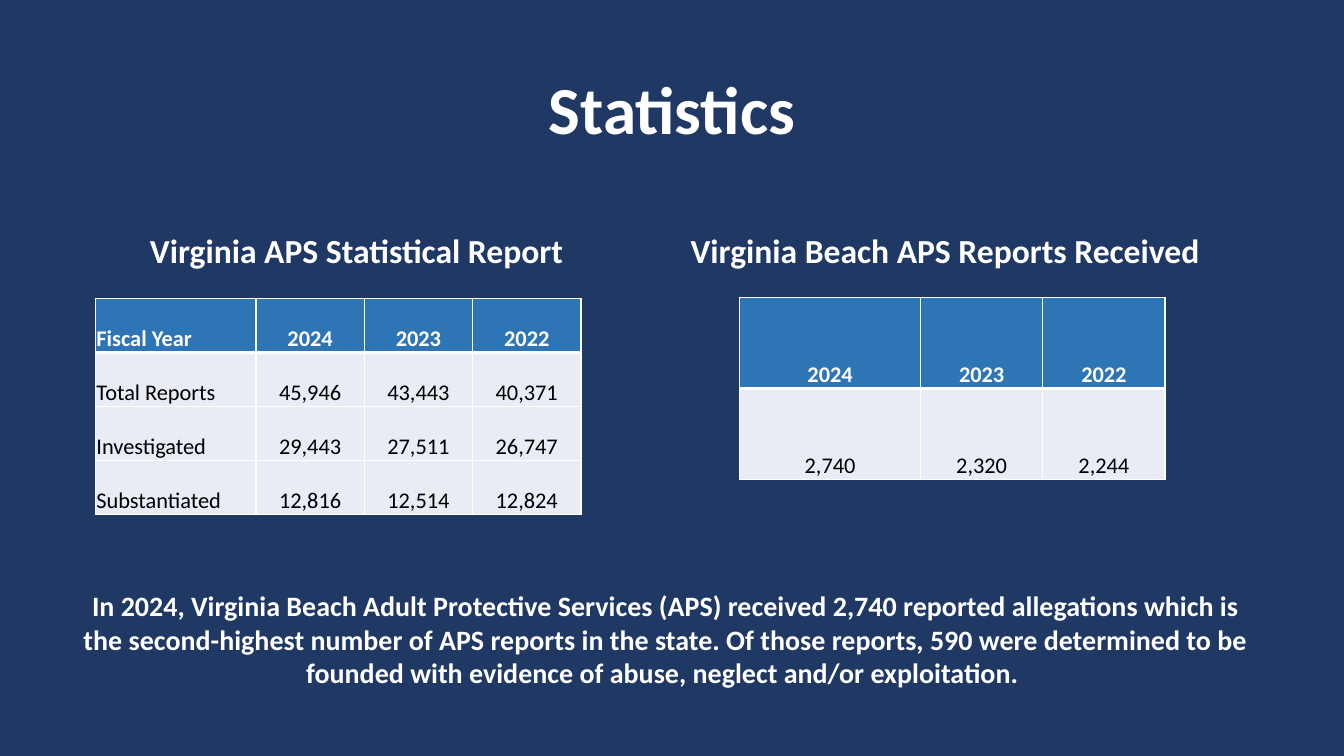
from lxml import etree
from pptx import Presentation
from pptx.dml.color import RGBColor
from pptx.enum import text as t
from pptx.oxml import ns
from pptx.util import Cm, Pt

NAVY, BLUE, PALE, WHITE, BLACK = "203864", "2E75B6", "E9EBF5", "FFFFFF", "000000"
LEFT, CENTER = t.PP_ALIGN.LEFT, t.PP_ALIGN.CENTER

STATE_ROWS = [
    ["Fiscal Year", "2024", "2023", "2022"],
    ["Total Reports", "45,946", "43,443", "40,371"],
    ["Investigated", "29,443", "27,511", "26,747"],
    ["Substantiated", "12,816", "12,514", "12,824"],
]
CITY_ROWS = [["2024", "2023", "2022"], ["2,740", "2,320", "2,244"]]
SUMMARY = (
    "In 2024, Virginia Beach Adult Protective Services (APS) received 2,740 reported "
    "allegations which is the second-highest number of APS reports in the state. "
    "Of those reports, 590 were determined to be founded with evidence of abuse, "
    "neglect and/or exploitation. "
)


def paint(color_fill, color):
    """Give a fill one solid colour."""
    color_fill.solid()
    color_fill.fore_color.rgb = RGBColor.from_string(color)


def style(para, size, align, color=WHITE, bold=True):
    """Set the alignment and font of a paragraph."""
    para.alignment = align
    para.font.name = "Calibri"
    para.font.size = Pt(size)
    para.font.bold = bold
    para.font.color.rgb = RGBColor.from_string(color)


def place(shape, left, top, width, height):
    """Move and size a shape in centimetres."""
    shape.left, shape.top = Cm(left), Cm(top)
    shape.width, shape.height = Cm(width), Cm(height)


def fill_placeholder(shape, words, bounds, size, align, anchor, tab=None):
    """Place a placeholder and write one formatted paragraph in it."""
    place(shape, *bounds)
    frame = shape.text_frame
    frame.text = words
    frame.word_wrap = True
    frame.auto_size = t.MSO_AUTO_SIZE.NONE
    frame.vertical_anchor = anchor
    para = frame.paragraphs[0]
    if tab:
        tabs = etree.SubElement(para._p.get_or_add_pPr(), ns.qn("a:tabLst"))
        etree.SubElement(tabs, ns.qn("a:tab"), pos=str(Cm(tab)), algn="l")
    para.line_spacing = 0.9
    para.space_before = Pt(0)
    style(para, size, align)


def add_borders(cell, top, bottom):
    """Draw white cell borders with the given top and bottom widths."""
    properties = cell._tc.get_or_add_tcPr()
    widths = {"lnL": 1, "lnR": 1, "lnT": top, "lnB": bottom}
    for index, (side, width) in enumerate(widths.items()):
        line = etree.Element(ns.qn(f"a:{side}"), w=str(Pt(width)))
        solid = etree.SubElement(line, ns.qn("a:solidFill"))
        etree.SubElement(solid, ns.qn("a:srgbClr"), val=WHITE)
        properties.insert(index, line)


def add_report_table(page, rows, left, top, column_widths, row_height):
    """Add a table with a blue header row and pale data rows."""
    frame = page.shapes.add_table(
        len(rows), len(column_widths), Cm(left), Cm(top),
        Cm(sum(column_widths)), Cm(row_height * len(rows)),
    )
    table = frame.table
    for column, width in zip(table.columns, column_widths):
        column.width = Cm(width)
    for r, values in enumerate(rows):
        table.rows[r].height = Cm(row_height)
        header = r == 0
        for c, value in enumerate(values):
            cell = table.cell(r, c)
            cell.text = value
            cell.vertical_anchor = t.MSO_ANCHOR.BOTTOM
            cell.margin_left = cell.margin_right = cell.margin_top = Cm(0.02)
            cell.margin_bottom = Cm(0)
            paint(cell.fill, BLUE if header else PALE)
            add_borders(cell, 3 if r == 1 else 1, 3 if header else 1)
            align = CENTER if value[0].isdigit() else LEFT
            style(cell.text_frame.paragraphs[0], 16, align,
                  WHITE if header else BLACK, header)


def add_summary(page):
    """Add the closing statement below the tables."""
    box = page.shapes.add_textbox(Cm(1.6), Cm(14.71), Cm(30.35), Cm(2.82))
    frame = box.text_frame
    frame.word_wrap = True
    frame.auto_size = t.MSO_AUTO_SIZE.SHAPE_TO_FIT_TEXT
    frame.text = SUMMARY
    style(frame.paragraphs[0], 20, CENTER)


def main():
    """Build the statistics slide."""
    deck = Presentation()
    deck.slide_width, deck.slide_height = Cm(33.87), Cm(19.05)
    page = deck.slides.add_slide(deck.slide_layouts.get_by_name("Comparison"))
    paint(page.background.fill, NAVY)
    title, state, state_body, city, city_body = page.placeholders
    for unused in (state_body, city_body):
        unused.element.getparent().remove(unused.element)

    fill_placeholder(title, "Statistics", (2.33, 1.01, 29.21, 3.68), 48,
                     CENTER, t.MSO_ANCHOR.MIDDLE)
    fill_placeholder(state, "Virginia APS Statistical Report\t",
                     (2.33, 4.67, 14.33, 2.29), 24, CENTER, t.MSO_ANCHOR.BOTTOM, 12.7)
    fill_placeholder(city, "Virginia Beach APS Reports Received",
                     (17.15, 4.67, 14.4, 2.29), 24, LEFT, t.MSO_ANCHOR.BOTTOM)
    add_report_table(page, STATE_ROWS, 2.41, 7.52, [4.04] + [2.73] * 3, 1.36)
    add_report_table(page, CITY_ROWS, 18.64, 7.49, [4.56] + [3.08] * 2, 2.3)
    add_summary(page)
    deck.save("out.pptx")


if __name__ == "__main__":
    main()
